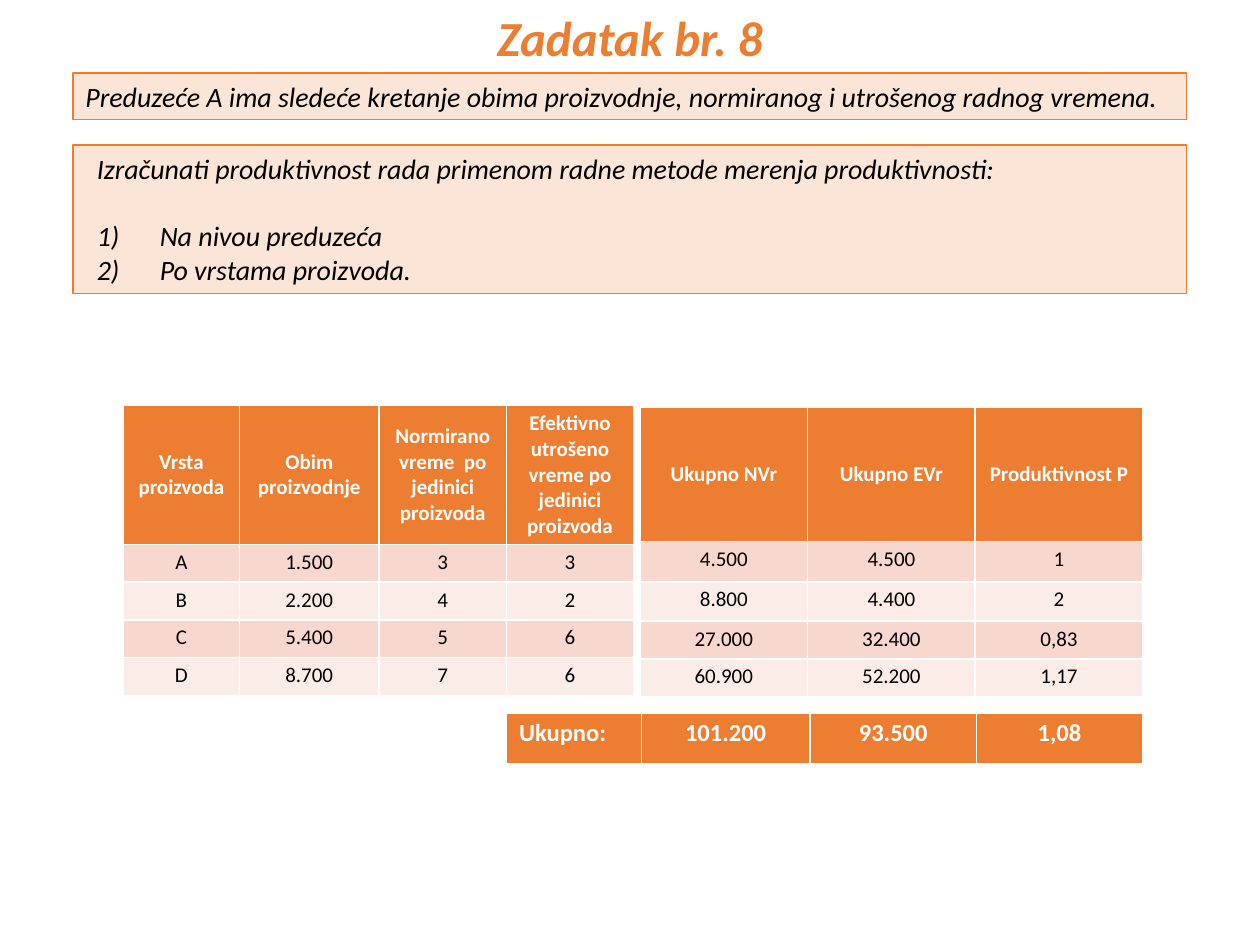
import pptx
import pptx.dml.color
import pptx.enum.shapes
import pptx.enum.text
import pptx.oxml.ns
import pptx.util
from lxml import etree

Inches = pptx.util.Inches
Pt = pptx.util.Pt
ALIGN = pptx.enum.text.PP_ALIGN
ANCHOR = pptx.enum.text.MSO_ANCHOR

FONT = "Calibri"
COLORS = {
    "accent": "ED7D31",
    "panel": "FBE5D6",
    "band_dark": "F8D7CE",
    "band_light": "FCECE8",
    "text": "000000",
    "white": "FFFFFF",
}

INPUT_ROWS = [
    ["Vrsta proizvoda", "Obim proizvodnje", "Normirano vreme  po jedinici proizvoda",
     "Efektivno utrošeno vreme po jedinici proizvoda"],
    ["A", "1.500", "3", "3"],
    ["B", "2.200", "4", "2"],
    ["C", "5.400", "5", "6"],
    ["D", "8.700", "7", "6"],
]
RESULT_ROWS = [
    ["Ukupno NVr", "Ukupno EVr", "Produktivnost P"],
    ["4.500", "4.500", "1"],
    ["8.800", "4.400", "2"],
    ["27.000", "32.400", "0,83"],
    ["60.900", "52.200", "1,17"],
]
TOTAL_ROWS = [["Ukupno:", "101.200", "93.500", "1,08"]]


def rgb(name):
    return pptx.dml.color.RGBColor.from_string(COLORS[name])


def add_run(p, text, size, color, bold=False, italic=False):
    r = p.add_run()
    r.text = text
    r.font.name = FONT
    r.font.size = Pt(size)
    r.font.bold = bold
    r.font.italic = italic
    r.font.color.rgb = rgb(color)


def set_indent(p, left, first=0, numbered=False):
    pPr = p._p.get_or_add_pPr()
    pPr.set("marL", str(Inches(left)))
    pPr.set("indent", str(Inches(first)))
    if numbered:
        bullet = etree.SubElement(pPr, pptx.oxml.ns.qn("a:buAutoNum"))
        bullet.set("type", "arabicParenR")


def set_title(s, text):
    title = s.shapes.title
    title.left, title.top = Inches(3.83), Inches(0.01)
    title.width, title.height = Inches(2.34), Inches(0.57)
    tf = title.text_frame
    tf.word_wrap = False
    tf.vertical_anchor = ANCHOR.MIDDLE
    p = tf.paragraphs[0]
    p.alignment = ALIGN.CENTER
    add_run(p, text, 28, "accent", bold=True, italic=True)


def add_panel(s, top, height, lines):
    """Add a tinted box with one justified paragraph per line; return the paragraphs."""
    sp = s.shapes.add_shape(pptx.enum.shapes.MSO_SHAPE.RECTANGLE,
                            Inches(0.58), Inches(top), Inches(8.84), Inches(height))
    sp.shadow.inherit = False
    sp.fill.solid()
    sp.fill.fore_color.rgb = rgb("panel")
    sp.line.color.rgb = rgb("accent")
    sp.line.width = Pt(0.75)
    tf = sp.text_frame
    tf.word_wrap = True
    tf.vertical_anchor = ANCHOR.TOP
    for i, line in enumerate(lines):
        p = tf.add_paragraph() if i else tf.paragraphs[0]
        p.alignment = ALIGN.JUSTIFY
        add_run(p, line, 16, "text", italic=True)
    return tf.paragraphs


def add_grid(s, left, top, widths, heights, rows, size=12, header_anchor=ANCHOR.MIDDLE):
    """Add a table with an accent header row and alternating bands below it."""
    table = s.shapes.add_table(len(rows), len(widths), Inches(left), Inches(top),
                               Inches(sum(widths)), Inches(sum(heights))).table
    for column, width in zip(table.columns, widths):
        column.width = Inches(width)
    for i, (values, height) in enumerate(zip(rows, heights)):
        table.rows[i].height = Inches(height)
        header = i == 0
        fill = "accent" if header else ("band_dark" if i % 2 else "band_light")
        for j, value in enumerate(values):
            cell = table.cell(i, j)
            cell.fill.solid()
            cell.fill.fore_color.rgb = rgb(fill)
            cell.margin_top = cell.margin_bottom = Inches(0.04)
            cell.vertical_anchor = header_anchor if header else ANCHOR.TOP
            p = cell.text_frame.paragraphs[0]
            p.alignment = ALIGN.CENTER
            add_run(p, value, size, "white" if header else "text", bold=header)
    return table


def main():
    prs = pptx.Presentation()
    prs.slide_width, prs.slide_height = Inches(10), Inches(7.5)
    s = prs.slides.add_slide(prs.slide_layouts[5])

    set_title(s, "Zadatak br. 8")
    add_panel(s, 0.58, 0.37, [
        "Preduzeće A ima sledeće kretanje obima proizvodnje, "
        "normiranog i utrošenog radnog vremena."])
    question, *tasks = add_panel(s, 1.15, 1.18, [
        "Izračunati produktivnost rada primenom radne metode merenja produktivnosti:",
        "Na nivou preduzeća",
        "Po vrstama proizvoda."])
    set_indent(question, 0.09)
    question.space_after = Pt(19.5)
    for task in tasks:
        set_indent(task, 0.59, -0.5, numbered=True)

    add_grid(s, 0.98, 3.22, [0.92, 1.11, 1.01, 1.01], [1.1] + [0.3] * 4, INPUT_ROWS)
    add_grid(s, 5.08, 3.23, [1.33] * 3, [1.07, 0.32, 0.31, 0.3, 0.3], RESULT_ROWS)
    totals = add_grid(s, 4.02, 5.66, [1.07, 1.34, 1.32, 1.32], [0.4], TOTAL_ROWS,
                      size=14, header_anchor=ANCHOR.TOP)
    totals.cell(0, 0).text_frame.paragraphs[0].alignment = ALIGN.LEFT

    prs.save("out.pptx")


if __name__ == "__main__":
    main()
